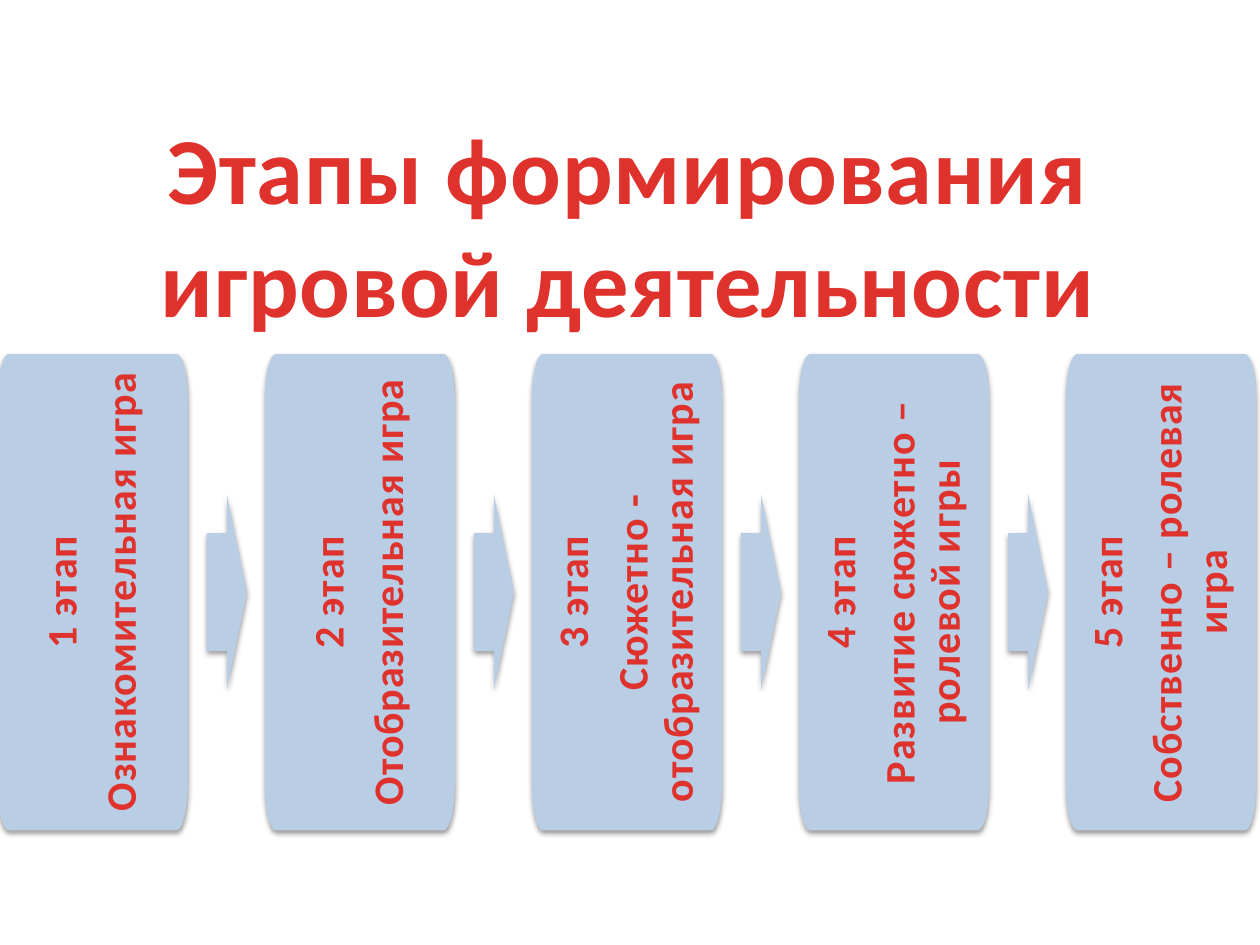
from math import cos, radians, sin

from lxml import etree
from pptx import Presentation
from pptx.dml.color import RGBColor
from pptx.enum.shapes import MSO_SHAPE
from pptx.enum.text import MSO_ANCHOR, MSO_AUTO_SIZE, PP_ALIGN
from pptx.oxml.ns import qn
from pptx.util import Inches, Pt

RIGHT_ARROW = MSO_SHAPE.RIGHT_ARROW
TOP, MIDDLE = MSO_ANCHOR.TOP, MSO_ANCHOR.MIDDLE
CENTER = PP_ALIGN.CENTER
NO_AUTOFIT = MSO_AUTO_SIZE.NONE

COLORS = {"text": "E0322D", "panel": "B9CDE5", "shadow": "000000"}
FONT = "Calibri"

STAGES = [
    "Ознакомительная игра",
    "Отобразительная игра",
    "Сюжетно - отобразительная игра",
    "Развитие сюжетно – ролевой игры",
    "Собственно – ролевая игра",
]

# Row of stages, in inches
ROW_LEFT, ROW_TOP, STEP = -0.02, 2.81, 2.12
CARD_WIDTH, CARD_HEIGHT = 1.51, 3.78
CORNER_X, CORNER_Y = 0.09, 0.37
ARROW_OFFSET, ARROW_WIDTH, ARROW_HEIGHT = 1.66, 0.32, 1.56


def card_outline(left, top):
    """Points of a rectangle whose corners are quarter ellipses."""
    right, bottom = left + CARD_WIDTH, top + CARD_HEIGHT
    corners = [
        (right - CORNER_X, bottom - CORNER_Y, 0),
        (left + CORNER_X, bottom - CORNER_Y, 90),
        (left + CORNER_X, top + CORNER_Y, 180),
        (right - CORNER_X, top + CORNER_Y, 270),
    ]
    return [
        (Inches(x + CORNER_X * cos(radians(angle))),
         Inches(y + CORNER_Y * sin(radians(angle))))
        for x, y, start in corners
        for angle in range(start, start + 91, 10)
    ]


class StageSlide:
    def __init__(self, presentation):
        self.slide = presentation.slides.add_slide(presentation.slide_layouts[5])

    def style_text(self, paragraph, size):
        paragraph.alignment = CENTER
        font = paragraph.font
        font.name, font.size, font.bold = FONT, Pt(size), True
        font.color.rgb = RGBColor.from_string(COLORS["text"])
        paragraph._p.pPr.find(qn("a:defRPr")).set("spc", "50")

    def style_panel(self, shape):
        shape.fill.solid()
        shape.fill.fore_color.rgb = RGBColor.from_string(COLORS["panel"])
        shape.line.fill.background()
        shape.shadow.inherit = False
        effects = shape._element.spPr.find(qn("a:effectLst"))
        shadow = etree.SubElement(
            effects, qn("a:outerShdw"), blurRad=str(Pt(3.1)), dist=str(Pt(1.6)),
            dir="5400000", rotWithShape="0")
        color = etree.SubElement(shadow, qn("a:srgbClr"), val=COLORS["shadow"])
        etree.SubElement(color, qn("a:alpha"), val="38000")

    def title(self, text):
        shape = self.slide.shapes.title
        shape.left, shape.top = Inches(-0.03), Inches(0.82)
        shape.width, shape.height = Inches(10.03), Inches(1.92)
        frame = shape.text_frame
        frame.text = text
        frame.word_wrap = True
        frame.auto_size = NO_AUTOFIT
        frame.vertical_anchor = TOP
        self.style_text(frame.paragraphs[0], 54)

    def card(self, left, lines):
        points = card_outline(left, ROW_TOP)
        builder = self.slide.shapes.build_freeform(*points[0])
        builder.add_line_segments(points[1:], close=True)
        shape = builder.convert_to_shape()
        self.style_panel(shape)
        frame = shape.text_frame
        frame.text = "\n".join(lines)
        frame.word_wrap = True
        frame.vertical_anchor = MIDDLE
        frame.margin_left = frame.margin_right = Inches(0.08)
        frame.margin_top = frame.margin_bottom = Inches(0.08)
        frame._txBody.bodyPr.set("vert", "vert270")
        for paragraph in frame.paragraphs:
            paragraph.line_spacing = 0.9
            paragraph.space_after = Pt(8)
            self.style_text(paragraph, 24)

    def arrow(self, left):
        top = ROW_TOP + (CARD_HEIGHT - ARROW_HEIGHT) / 2
        shape = self.slide.shapes.add_shape(
            RIGHT_ARROW, Inches(left), Inches(top),
            Inches(ARROW_WIDTH), Inches(ARROW_HEIGHT))
        shape.adjustments[0], shape.adjustments[1] = 0.6, 0.5
        self.style_panel(shape)


def main():
    presentation = Presentation()
    presentation.slide_width, presentation.slide_height = Inches(10), Inches(7.5)
    slide = StageSlide(presentation)

    # Heading
    slide.title("Этапы формирования игровой деятельности")

    # Stages, with an arrow between neighbours
    for index, name in enumerate(STAGES):
        left = ROW_LEFT + index * STEP
        slide.card(left, [f"{index + 1} этап", name])
        if index < len(STAGES) - 1:
            slide.arrow(left + ARROW_OFFSET)

    presentation.save("out.pptx")


if __name__ == "__main__":
    main()
